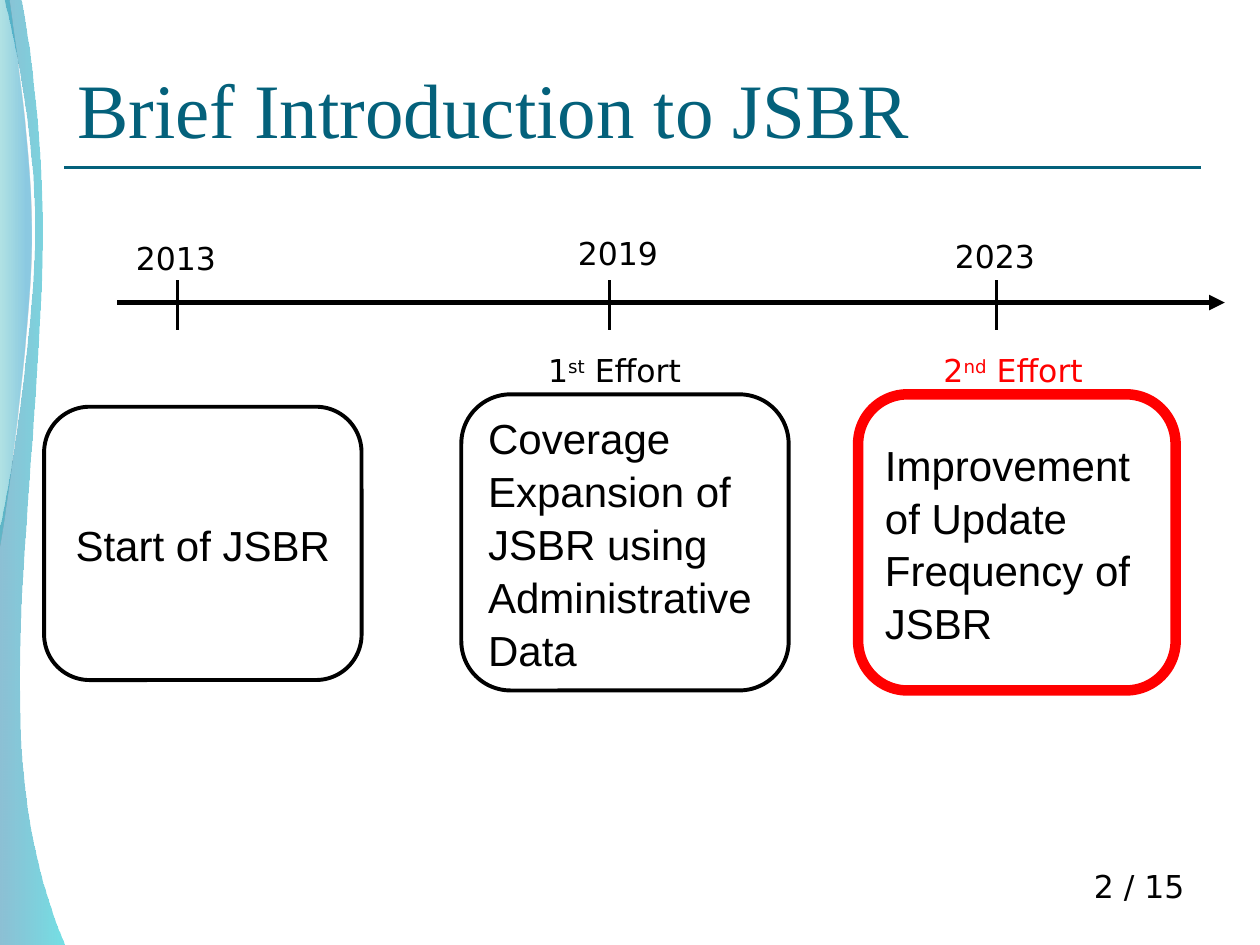
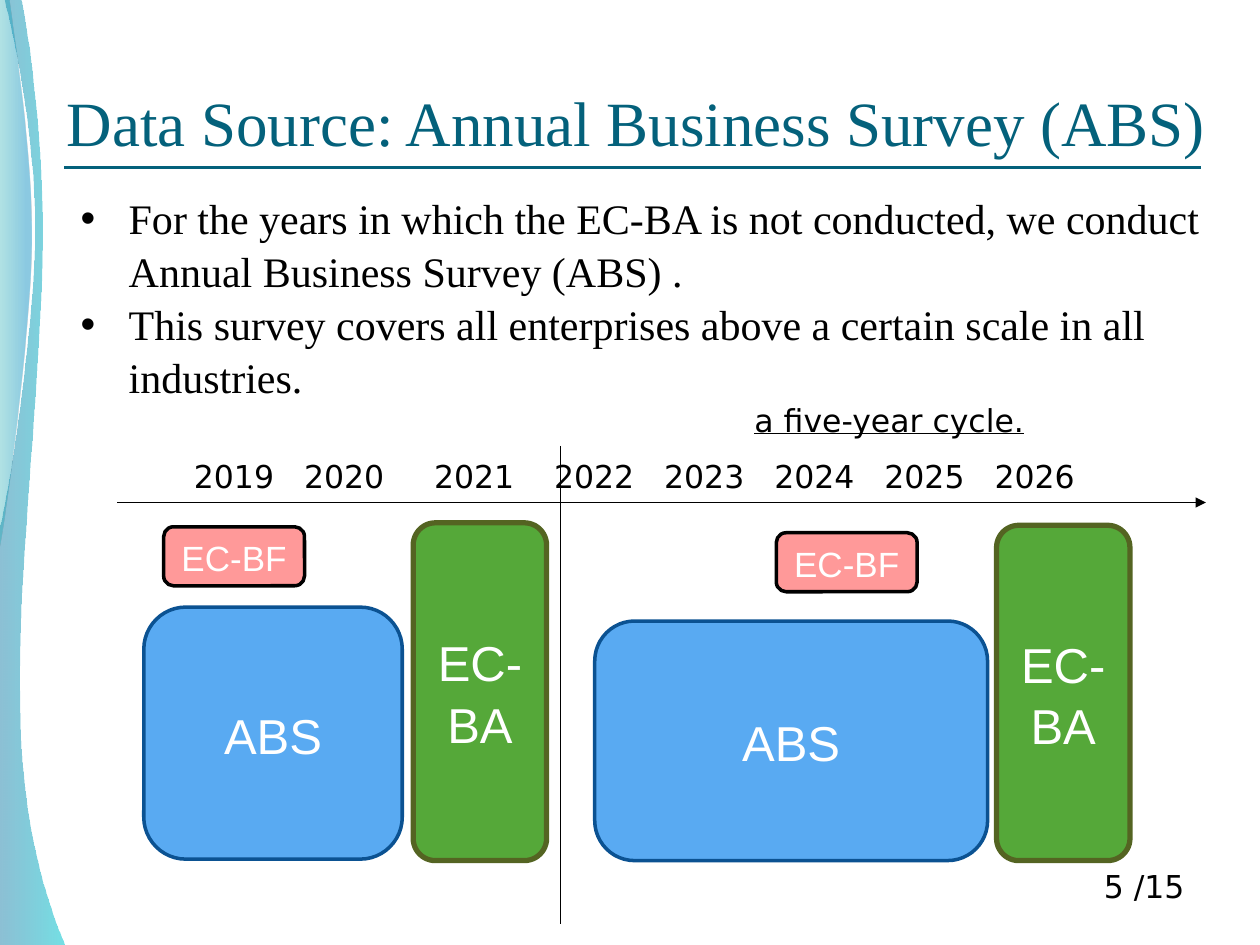
from lxml.etree import SubElement
from pptx import Presentation
from pptx.dml.color import RGBColor
from pptx.enum.shapes import MSO_CONNECTOR as Connector, MSO_SHAPE as Shape
from pptx.enum.text import MSO_ANCHOR as Anchor, MSO_AUTO_SIZE as AutoSize, PP_ALIGN as Align
from pptx.oxml.ns import qn
from pptx.util import Cm, Pt

TEAL = RGBColor(0x04, 0x61, 0x7B)
BLACK = RGBColor(0x00, 0x00, 0x00)
WHITE = RGBColor(0xFF, 0xFF, 0xFF)
RED = RGBColor(0xFF, 0x00, 0x00)
GREEN = RGBColor(0x55, 0xA8, 0x39)
DARK_GREEN = RGBColor(0x54, 0x64, 0x22)
BLUE = RGBColor(0x59, 0xAA, 0xF2)
DARK_BLUE = RGBColor(0x0B, 0x52, 0x92)
PINK = RGBColor(0xFF, 0x99, 0x99)

SERIF, SANS, LABEL = "Times New Roman", "Arial", "DejaVu Sans"
LINE_SPACING = 1.05

# Wave outlines in cm: two numbers are a corner, six a Bezier curve
OUTER_WAVE = [
    (0, 19.05), (0, 10.67),
    (0.2, 9.98, 0.71, 6.4, 0.71, 4.6), (0.71, 2.79, 0.3, 0.79, 0.1, 0),
    (0.43, 0),
    (0.51, 0.3, 0.86, 2.46, 0.86, 4.83), (0.86, 7.19, 0.33, 11.79, 0.41, 14.15),
    (0.41, 16.59, 0.94, 18.19, 1.3, 19.05),
]
INNER_WAVE = [
    (0, 11.1),
    (0.13, 10.46, 0.61, 6.78, 0.64, 4.93), (0.66, 3.07, 0.3, 0.81, 0.2, 0),
    (0, 0),
]
# Gradient stops: position, colour, opacity in percent
OUTER_STOPS = [(0, RGBColor(0x00, 0x74, 0xA1), 45), (1, RGBColor(0x00, 0xC6, 0xCF), 55)]
INNER_STOPS = [(0, RGBColor(0x00, 0xA1, 0xA9), 30), (0.8, RGBColor(0x00, 0x8B, 0xBF), 45)]


# --- Text ---

def add_run(paragraph, text, size, font, color, superscript=False, underline=False):
    run = paragraph.add_run()
    run.text = text
    run.font.size = Pt(size)
    run.font.name = font
    run.font.color.rgb = color
    if underline:
        run.font.underline = True
    if superscript:
        run.font._element.set("baseline", "30000")


def place(shape, left, top, width, height):
    shape.left, shape.top = Cm(left), Cm(top)
    shape.width, shape.height = Cm(width), Cm(height)


def add_label(slide, left, top, width, height=1.02, align=Align.LEFT):
    """Add a text box and return its paragraph, ready for runs."""
    frame = slide.shapes.add_textbox(Cm(left), Cm(top), Cm(width), Cm(height)).text_frame
    frame.word_wrap = True
    frame.paragraphs[0].alignment = align
    return frame.paragraphs[0]


def set_title(slide, text, size, *box):
    title = slide.shapes.title
    place(title, *box)
    frame = title.text_frame
    frame.auto_size = AutoSize.NONE
    frame.vertical_anchor = Anchor.BOTTOM
    frame.paragraphs[0].alignment = Align.LEFT
    add_run(frame.paragraphs[0], text, size, SERIF, TEAL)


def fill_bullets(body, items, *box):
    place(body, *box)
    frame = body.text_frame
    frame.auto_size = AutoSize.NONE
    for index, item in enumerate(items):
        paragraph = frame.add_paragraph() if index else frame.paragraphs[0]
        properties = paragraph._p.get_or_add_pPr()
        properties.set("marL", str(Cm(0.97)))
        properties.set("indent", str(-Cm(0.97)))
        SubElement(properties, qn("a:buFont")).set("typeface", SANS)
        SubElement(properties, qn("a:buChar")).set("char", "•")
        paragraph.space_before = Pt(0)
        paragraph.line_spacing = LINE_SPACING
        add_run(paragraph, item, 24, SERIF, BLACK)


def add_tab_stops(paragraph, stops):
    tabs = SubElement(paragraph._p.get_or_add_pPr(), qn("a:tabLst"))
    for stop in stops:
        tab = SubElement(tabs, qn("a:tab"))
        tab.set("pos", str(Cm(stop)))
        tab.set("algn", "l")


# --- Shapes ---

def add_line(slide, x1, y1, x2, y2, width, color=BLACK, arrow=False):
    line = slide.shapes.add_connector(
        Connector.STRAIGHT, Cm(x1), Cm(y1), Cm(x2), Cm(y2))
    line.line.color.rgb = color
    line.line.width = Pt(width)
    if arrow:
        SubElement(line.line._get_or_add_ln(), qn("a:tailEnd")).set("type", "triangle")
    SubElement(line._element.spPr, qn("a:effectLst"))


def add_box(slide, text, box, outline, weight, size=24, fill=None,
            color=BLACK, align=Align.CENTER):
    shape = slide.shapes.add_shape(Shape.ROUNDED_RECTANGLE, *(Cm(value) for value in box))
    shape.shadow.inherit = False
    if fill is None:
        shape.fill.background()
    else:
        shape.fill.solid()
        shape.fill.fore_color.rgb = fill
    shape.line.color.rgb = outline
    shape.line.width = Pt(weight)
    frame = shape.text_frame
    frame.word_wrap = True
    frame.vertical_anchor = Anchor.MIDDLE
    paragraph = frame.paragraphs[0]
    paragraph.alignment = align
    paragraph.line_spacing = LINE_SPACING
    add_run(paragraph, text, size, SANS, color)


def trace(outline, steps=16):
    """Turn corners and Bezier curves into a list of points."""
    points = [outline[0]]
    for part in outline[1:]:
        if len(part) == 2:
            points.append(part)
            continue
        x0, y0 = points[-1]
        x1, y1, x2, y2, x3, y3 = part
        for step in range(1, steps + 1):
            t = step / steps
            a, b, c, d = (1 - t) ** 3, 3 * t * (1 - t) ** 2, 3 * t * t * (1 - t), t ** 3
            points.append((a * x0 + b * x1 + c * x2 + d * x3,
                           a * y0 + b * y1 + c * y2 + d * y3))
    return points


def add_wave(slide, outline, stops):
    points = [(Cm(x), Cm(y)) for x, y in trace(outline)]
    builder = slide.shapes.build_freeform(*points[0])
    builder.add_line_segments(points[1:], close=True)
    wave = builder.convert_to_shape()
    wave.shadow.inherit = False
    wave.line.fill.background()
    wave.fill.gradient()
    wave.fill.gradient_angle = 0
    for stop, (position, color, _) in zip(wave.fill.gradient_stops, stops):
        stop.position = position
        stop.color.rgb = color
    for node, (_, _, opacity) in zip(wave._element.spPr.iter(qn("a:srgbClr")), stops):
        SubElement(node, qn("a:alpha")).set("val", str(opacity * 1000))


# --- Slides ---

def start_slide(deck, layout, page):
    """Add a slide with the shared waves, title rule and page number."""
    slide = deck.slides.add_slide(deck.slide_layouts[layout])
    add_line(slide, 1.3, 3.38, 24.21, 3.38, 1.5, TEAL)
    add_wave(slide, OUTER_WAVE, OUTER_STOPS)
    add_wave(slide, INNER_WAVE, INNER_STOPS)
    number = add_label(slide, 18.21, 17.35, 5.92, 1.27, Align.RIGHT)
    add_run(number, page, 18, LABEL, BLACK)
    return slide


def build_introduction(deck):
    slide = start_slide(deck, 5, "2 / 15")
    set_title(slide, "Brief Introduction to JSBR", 44, 1.3, 0.05, 22.86, 3.18)

    # Timeline: year, label position, tick
    add_line(slide, 2.36, 6.1, 24.69, 6.1, 3, arrow=True)
    for year, left, top, tick in [("2013", 2.49, 4.7, 3.58),
                                  ("2019", 11.4, 4.6, 12.29),
                                  ("2023", 19, 4.65, 20.09)]:
        add_line(slide, tick, 5.65, tick, 6.65, 1.5)
        add_run(add_label(slide, left, top, 4.19), year, 18, LABEL, BLACK)

    # Milestones
    add_box(slide, "Start of JSBR", (0.89, 8.2, 6.4, 5.51), BLACK, 2.25)
    add_box(slide, "Coverage Expansion of JSBR using Administrative Data",
            (9.3, 7.95, 6.6, 5.97), BLACK, 2.25, align=Align.LEFT)
    add_box(slide, "Improvement of Update Frequency of JSBR",
            (17.3, 7.95, 6.4, 5.97), RED, 6, align=Align.LEFT)
    for digit, ordinal, left, color in [("1", "st", 10.8, BLACK), ("2", "nd", 18.77, RED)]:
        effort = add_label(slide, left, 6.96, 5.41)
        add_run(effort, digit, 18, LABEL, color)
        add_run(effort, ordinal, 18, LABEL, color, superscript=True)
        add_run(effort, " Effort", 18, LABEL, color)


def build_data_source(deck):
    slide = start_slide(deck, 1, "5 /15")
    set_title(slide, "Data Source: Annual Business Survey (ABS)", 36,
              1.09, 0.15, 24.31, 3.18)
    fill_bullets(slide.placeholders[1], [
        "For the years in which the EC-BA is not conducted, we conduct "
        "Annual Business Survey (ABS) .",
        "This survey covers all enterprises above a certain scale in all industries.",
    ], 1.37, 3.71, 23.57, 4.8)

    # Surveys in each cycle
    for box in [(8.33, 10.54, 2.69, 6.81), (20.09, 10.59, 2.69, 6.76)]:
        add_box(slide, "EC-BA", box, DARK_GREEN, 3, 28, GREEN, WHITE)
    for box in [(2.9, 12.24, 5.21, 5.08), (11.99, 12.52, 7.92, 4.83)]:
        add_box(slide, "ABS", box, DARK_BLUE, 2, 28, BLUE, WHITE)
    for left, top in [(3.3, 10.62), (15.65, 10.74)]:
        add_box(slide, "EC-BF", (left, top, 2.84, 1.19), BLACK, 2, 20, PINK, WHITE)

    # Year axis, with a wider gap on both sides of 2021
    years = add_label(slide, 3.66, 9.09, 21.01)
    pitch, second_cycle = 2.22, 7.26
    add_tab_stops(years, [pitch, 4.84] + [second_cycle + pitch * n for n in range(5)])
    add_run(years, "\t".join(str(year) for year in range(2019, 2027)), 18, LABEL, BLACK)
    add_line(slide, 2.36, 10.13, 24.31, 10.13, 0.75, arrow=True)
    add_line(slide, 11.3, 8.99, 11.3, 18.62, 0.75)
    cycle = add_label(slide, 14.96, 7.95, 7.06)
    add_run(cycle, "a five-year cycle.", 18, LABEL, BLACK, underline=True)


def main():
    deck = Presentation()
    deck.slide_width, deck.slide_height = Cm(25.4), Cm(19.05)
    build_introduction(deck)
    build_data_source(deck)
    deck.save("out.pptx")


if __name__ == "__main__":
    main()
